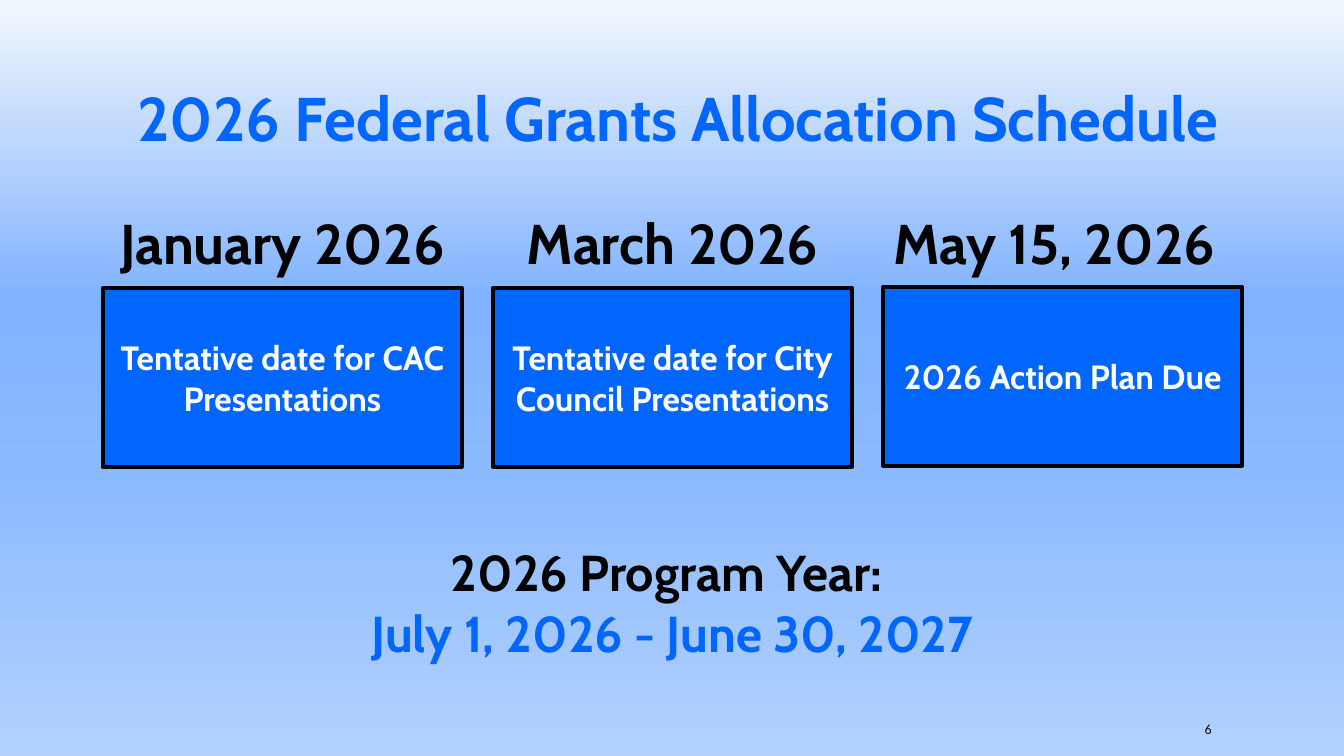
from dataclasses import dataclass

from lxml import etree
from pptx import Presentation
from pptx.dml.color import RGBColor
from pptx.enum.shapes import MSO_SHAPE
from pptx.enum.text import MSO_ANCHOR, PP_ALIGN
from pptx.oxml.ns import qn
from pptx.util import Inches, Pt

LEFT, CENTER = PP_ALIGN.LEFT, PP_ALIGN.CENTER
TOP, MIDDLE = MSO_ANCHOR.TOP, MSO_ANCHOR.MIDDLE
RECTANGLE = MSO_SHAPE.RECTANGLE

BLUE, BLACK, WHITE, GRAY = "0066FF", "000000", "FFFFFF", "0D0D0D"
BACKGROUND_STOPS = {0: "F2F7FF", 40: "80B2FF", 62: "8CBAFF", 100: "B2D1FF"}
COLUMN_LEFT, COLUMN_STEP, COLUMN_WIDTH = 1.02, 3.87, 3.56
DATE_TOP, DATE_HEIGHT = 2.02, 0.77
BOX_HEIGHT = 1.77


@dataclass
class Line:
    text: str
    size: float
    color: str
    font: str = "Cabin"
    bold: bool = True


@dataclass
class Milestone:
    date: str
    task: str
    date_align: PP_ALIGN = CENTER
    box_top: float = 2.86


MILESTONES = [
    Milestone("January 2026", "Tentative date for CAC Presentations"),
    Milestone("March 2026", "Tentative date for City Council Presentations"),
    Milestone("May 15, 2026", "2026 Action Plan Due", LEFT, 2.85),
]


def rgb(color: str) -> RGBColor:
    return RGBColor.from_string(color)


def write(sp, lines: list[Line], align: PP_ALIGN, anchor: MSO_ANCHOR) -> None:
    tf = sp.text_frame
    tf.word_wrap = True
    tf.vertical_anchor = anchor
    for i, line in enumerate(lines):
        p = tf.paragraphs[0] if i == 0 else tf.add_paragraph()
        p.alignment = align
        r = p.add_run()
        r.text = line.text
        formats = {"name": line.font, "size": Pt(line.size), "bold": line.bold}
        for name, value in formats.items():
            setattr(r.font, name, value)
        r.font.color.rgb = rgb(line.color)


def add_text(s, at: tuple, lines: list[Line], align: PP_ALIGN = CENTER,
             anchor: MSO_ANCHOR = TOP) -> None:
    sp = s.shapes.add_textbox(*map(Inches, at))
    write(sp, lines, align, anchor)


def add_task_box(s, at: tuple, task: str) -> None:
    sp = s.shapes.add_shape(RECTANGLE, *map(Inches, at))
    sp.shadow.inherit = False
    sp.fill.solid()
    sp.fill.fore_color.rgb = rgb(BLUE)
    sp.line.color.rgb = rgb(BLACK)
    sp.line.width = Pt(3)
    write(sp, [Line(task, 24, WHITE)], CENTER, MIDDLE)


def set_background(s) -> None:
    fill = s.background.fill
    fill.gradient()
    fill.gradient_angle = 270
    stops = s.element.find(f".//{qn('a:gsLst')}")
    for stop in list(stops):
        stops.remove(stop)
    for percent, color in BACKGROUND_STOPS.items():
        stop = etree.SubElement(stops, qn("a:gs"), pos=str(percent * 1000))
        etree.SubElement(stop, qn("a:srgbClr"), val=color)


def main() -> None:
    prs = Presentation()
    prs.slide_width, prs.slide_height = Inches(13.33), Inches(7.5)
    s = prs.slides.add_slide(prs.slide_layouts[6])
    set_background(s)

    add_text(s, (0.12, 0.74, 13.21, 0.84),
             [Line("2026 Federal Grants Allocation Schedule", 44, BLUE)])
    for i, m in enumerate(MILESTONES):
        left = COLUMN_LEFT + i * COLUMN_STEP
        add_text(s, (left, DATE_TOP, COLUMN_WIDTH, DATE_HEIGHT),
                 [Line(m.date, 40, BLACK)], m.date_align)
        add_task_box(s, (left, m.box_top, COLUMN_WIDTH, BOX_HEIGHT), m.task)
    add_text(s, (3.01, 5.32, 7.32, 1.31),
             [Line("2026 Program Year: ", 36, BLACK),
              Line("July 1, 2026 - June 30, 2027", 36, BLUE)])
    add_text(s, (11.85, 7.08, 1.06, 0.3),
             [Line("6", 10, GRAY, "Calibri", False)], LEFT, MIDDLE)

    prs.save("out.pptx")


if __name__ == "__main__":
    main()
